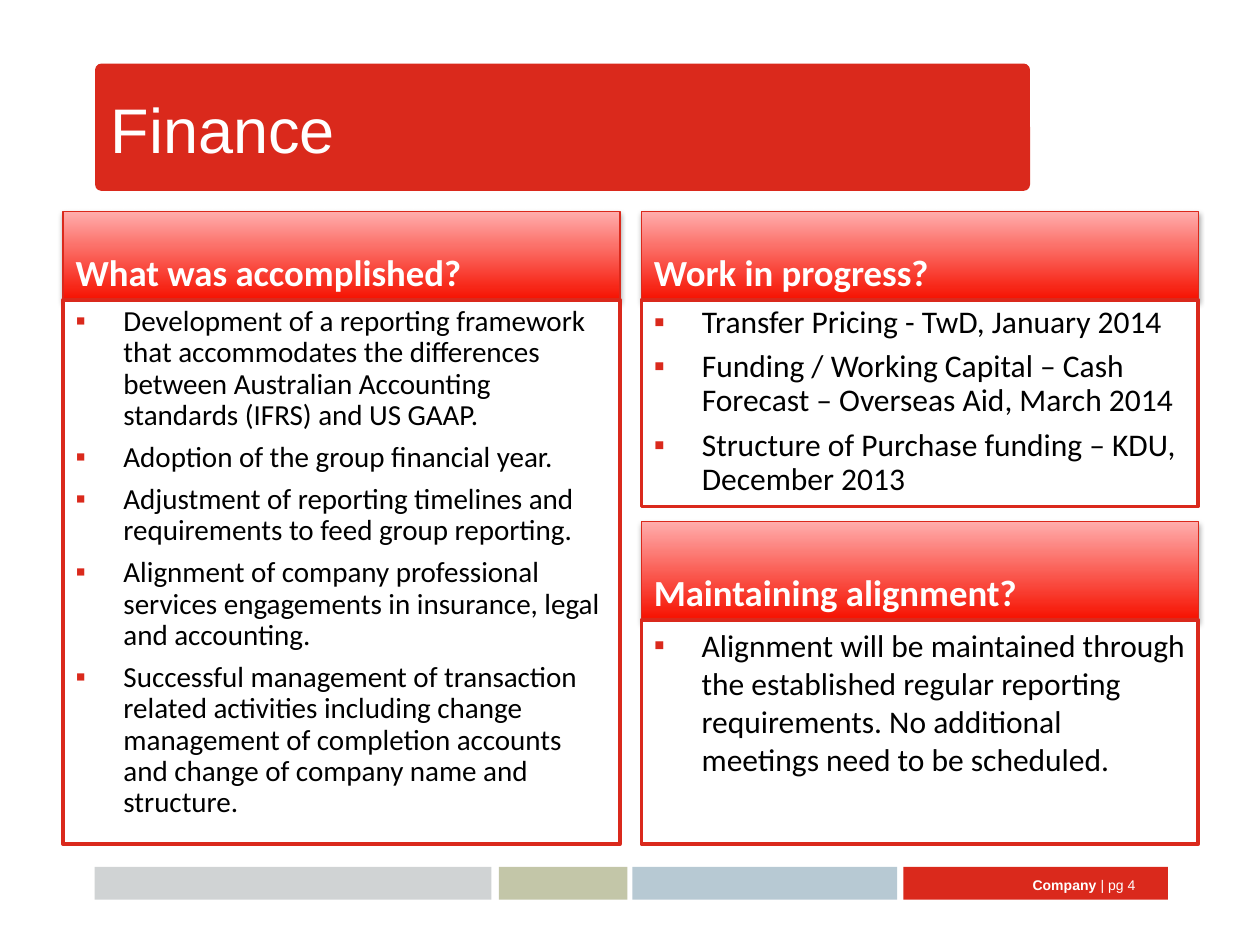
"""Build the finance status slide with three headed panels."""
from lxml.etree import SubElement
from pptx import Presentation
from pptx.dml.color import RGBColor
from pptx.enum.shapes import MSO_SHAPE
from pptx.enum.text import MSO_ANCHOR, MSO_AUTO_SIZE, PP_ALIGN
from pptx.oxml.ns import qn
from pptx.util import Inches, Pt

RED = RGBColor(0xDA, 0x29, 0x1C)
BRIGHT_RED = RGBColor(0xF6, 0x11, 0x00)
PINK = RGBColor(0xFF, 0xAD, 0xAC)
GREY = RGBColor(0xD0, 0xD3, 0xD4)
OLIVE = RGBColor(0xC3, 0xC6, 0xA8)
BLUE = RGBColor(0xB7, 0xC9, 0xD3)
WHITE = RGBColor(0xFF, 0xFF, 0xFF)
BLACK = RGBColor(0x00, 0x00, 0x00)


def write(shape, lines, size, color, font="Calibri", bold=False, lead="", bullet="",
          anchor=MSO_ANCHOR.TOP, align=PP_ALIGN.LEFT, spacing=1.0):
    frame = shape.text_frame
    frame.word_wrap = True
    frame.auto_size = MSO_AUTO_SIZE.NONE
    frame.vertical_anchor = anchor
    for index, line in enumerate(lines):
        paragraph = frame.add_paragraph() if index else frame.paragraphs[0]
        if bullet:
            properties = paragraph._p.get_or_add_pPr()
            properties.set("marL", str(Inches(0.38)))
            properties.set("indent", str(Inches(-0.38)))
            bullet_color = SubElement(properties, qn("a:buClr"))
            SubElement(bullet_color, qn("a:srgbClr"), val=str(RED))
            SubElement(properties, qn("a:buFont"), typeface="Arial")
            SubElement(properties, qn("a:buChar"), char=bullet)
        paragraph.alignment = align
        paragraph.line_spacing = spacing
        paragraph.space_before = Pt(6 if index else 0)
        for text, is_bold in ((lead, True), (line, bold)):
            if text:
                run = paragraph.add_run()
                run.text = text
                run.font.name = font
                run.font.size = Pt(size)
                run.font.bold = is_bold
                run.font.color.rgb = color


def place(shape, left, top, width, height, fill=None, line_width=0):
    shape.left, shape.top = Inches(left), Inches(top)
    shape.width, shape.height = Inches(width), Inches(height)
    shape.shadow.inherit = False
    if fill is not None:
        shape.fill.solid()
        shape.fill.fore_color.rgb = fill
    if line_width:
        shape.line.color.rgb = RED
        shape.line.width = Pt(line_width)
    else:
        shape.line.fill.background()


presentation = Presentation()
presentation.slide_width = Inches(10)
presentation.slide_height = Inches(7.5)
slide = presentation.slides.add_slide(presentation.slide_layouts[4])
shapes = slide.shapes
title = shapes.title

banner = shapes.add_shape(MSO_SHAPE.ROUNDED_RECTANGLE, 0, 0, 0, 0)
banner.adjustments[0] = 0.045
place(banner, 0.76, 0.51, 7.41, 1, RED, 0.75)
title._element.addprevious(banner._element)
place(title, 0.78, 0.51, 7.38, 1.01)
write(title, ["Finance"], 36, WHITE, font="Arial", anchor=MSO_ANCHOR.MIDDLE)

for left, width, color in ((0.75, 3.15, GREY), (3.96, 1.02, OLIVE),
                           (5.02, 2.1, BLUE), (7.17, 2.1, RED)):
    bar = shapes.add_shape(MSO_SHAPE.RECTANGLE, 0, 0, 0, 0)
    place(bar, left, 6.88, width, 0.26, color)

footer = shapes.add_textbox(Inches(7.82), Inches(6.82), Inches(1.29), Inches(0.4))
write(footer, ["| pg 4"], 8, WHITE, font="Arial", lead="Company ",
      anchor=MSO_ANCHOR.MIDDLE, align=PP_ALIGN.RIGHT)

placeholders = {item.placeholder_format.idx: item for item in slide.placeholders}
panels = [
    (placeholders[1], placeholders[2], 0.5, 1.68, 0.7, 4.32, 16.6, 0.9,
     "What was accomplished?", [
         "Development of a reporting framework that accommodates the differences "
         "between Australian Accounting standards (IFRS) and US GAAP.",
         "Adoption of the group financial year.",
         "Adjustment of reporting timelines and requirements to feed group reporting.",
         "Alignment of company professional services engagements in insurance, "
         "legal and accounting.",
         "Successful management of transaction related activities including change "
         "management of completion accounts and change of company name and structure.",
     ]),
    (placeholders[3], placeholders[4], 5.09, 1.68, 0.7, 1.64, 18, 0.9,
     "Work in progress?", [
         "Transfer Pricing - TwD, January 2014",
         "Funding / Working Capital – Cash Forecast – Overseas Aid, March 2014",
         "Structure of Purchase funding – KDU, December 2013",
     ]),
    (shapes.add_shape(MSO_SHAPE.RECTANGLE, 0, 0, 0, 0),
     shapes.add_shape(MSO_SHAPE.RECTANGLE, 0, 0, 0, 0), 5.09, 4.14, 0.78, 1.78, 18, 1.0,
     "Maintaining alignment?", [
         "Alignment will be maintained through the established regular reporting "
         "requirements. No additional meetings need to be scheduled.",
     ]),
]

for header, body, left, top, header_height, body_height, size, spacing, heading, items in panels:
    place(header, left, top, 4.42, header_height, line_width=0.75)
    header.fill.gradient()
    header.fill.gradient_angle = 90
    for stop, color in zip(header.fill.gradient_stops, (BRIGHT_RED, PINK)):
        stop.color.rgb = color
    effects = header._element.spPr.find(qn("a:effectLst"))
    shadow = SubElement(effects, qn("a:outerShdw"), blurRad=str(Pt(3.1)),
                        dist=str(Pt(1.8)), dir="5400000", rotWithShape="0")
    shadow_color = SubElement(shadow, qn("a:srgbClr"), val=str(BLACK))
    SubElement(shadow_color, qn("a:alpha"), val="35000")
    write(header, [heading], 21, WHITE, bold=True, anchor=MSO_ANCHOR.BOTTOM)

    place(body, left, top + header_height, 4.42, body_height, WHITE, 2)
    write(body, items, size, BLACK, bullet="▪", spacing=spacing)

presentation.save("out.pptx")
